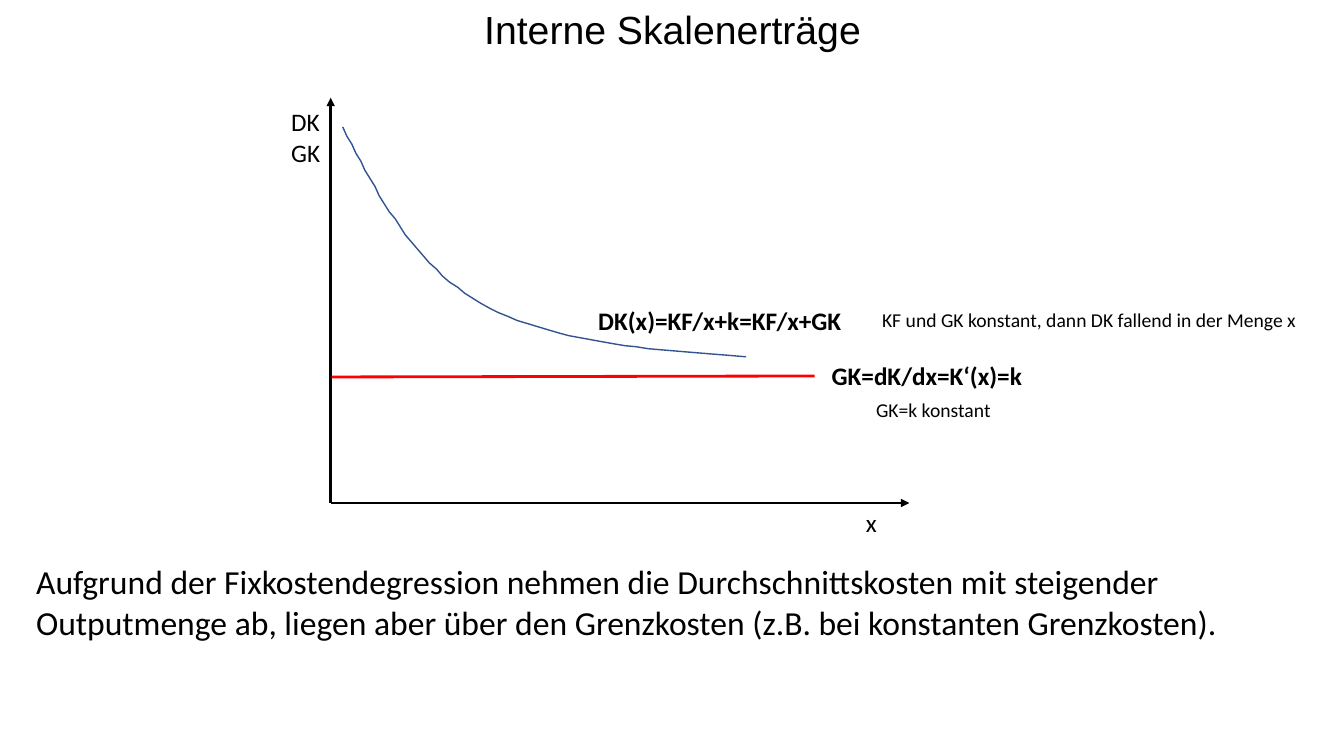
from dataclasses import dataclass

from lxml.etree import SubElement
from pptx import Presentation
from pptx.dml.color import RGBColor
from pptx.enum.shapes import MSO_CONNECTOR
from pptx.enum.text import MSO_ANCHOR, PP_ALIGN
from pptx.oxml.ns import qn
from pptx.util import Emu, Pt

SCALE = 9144  # EMU per px, 100 px to the inch
STEPS = 24    # straight pieces per curve segment


@dataclass(frozen=True)
class Theme:
    ink: str = "000000"
    red: str = "FF0000"
    blue: str = "325491"
    head: str = "Arial"
    body: str = "Calibri"
    title: int = 28
    lead: int = 24
    label: int = 18
    note: int = 14
    thick: int = 2
    thin: int = 1


def px(num):
    return Emu(round(num * SCALE))


def bezier(a, b, c, d):
    """Points on a cubic curve, without its start."""
    for i in range(1, STEPS + 1):
        t = i / STEPS
        u = 1 - t
        yield tuple(u**3 * p + 3 * u * u * t * q + 3 * u * t * t * r + t**3 * s
                    for p, q, r, s in zip(a, b, c, d))


class Canvas:
    def __init__(self, slide, theme):
        self.slide = slide
        self.theme = theme

    def text(self, box, lines, size, font=None, bold=False,
             align=PP_ALIGN.LEFT, wrap=True, mid=False, space=1.0):
        shape = self.slide.shapes.add_textbox(*map(px, box))
        frame = shape.text_frame
        frame.word_wrap = wrap
        frame.vertical_anchor = MSO_ANCHOR.MIDDLE if mid else MSO_ANCHOR.TOP
        for i, line in enumerate(lines):
            para = frame.add_paragraph() if i else frame.paragraphs[0]
            para.alignment = align
            para.line_spacing = space
            run = para.add_run()
            run.text = line
            run.font.name = font or self.theme.body
            run.font.size = Pt(size)
            run.font.bold = bold
            run.font.color.rgb = RGBColor.from_string(self.theme.ink)

    def stroke(self, line, color, width):
        line.color.rgb = RGBColor.from_string(color)
        line.width = Pt(width)

    def line(self, start, end, color, arrow=False):
        link = self.slide.shapes.add_connector(
            MSO_CONNECTOR.STRAIGHT, *map(px, start + end))
        self.stroke(link.line, color, self.theme.thick)
        if arrow:
            SubElement(link.line._get_or_add_ln(), qn("a:tailEnd"), type="triangle")
        SubElement(link._element.spPr, qn("a:effectLst"))

    def curve(self, start, parts, color):
        pts, last = [], start
        for part in parts:
            pts += bezier(last, *part)
            last = part[-1]
        form = self.slide.shapes.build_freeform(*start, scale=SCALE)
        form.add_line_segments(pts, close=False)
        shape = form.convert_to_shape()
        shape.shadow.inherit = False
        shape.fill.background()
        self.stroke(shape.line, color, self.theme.thin)


def main():
    deck = Presentation()
    deck.slide_width, deck.slide_height = px(1333), px(750)
    theme = Theme()
    art = Canvas(deck.slides.add_slide(deck.slide_layouts[6]), theme)

    # Title and conclusion
    art.text((167, -3, 1000, 70), ["Interne Skalenerträge"], theme.title,
             font=theme.head, align=PP_ALIGN.CENTER, mid=True, space=0.9)
    art.text((26, 552, 1307, 94),
             ["Aufgrund der Fixkostendegression nehmen die Durchschnittskosten "
              "mit steigender Outputmenge ab, liegen aber über den Grenzkosten "
              "(z.B. bei konstanten Grenzkosten)."], theme.lead)

    # Axes
    origin = (328, 499)
    for tip in ((328, 97), (902, 499)):
        art.line(origin, tip, theme.ink, arrow=True)
    art.text((849, 498, 31, 40), ["x"], theme.label, wrap=False)
    art.text((279, 101, 49, 71), ["DK", "GK"], theme.label, wrap=False)

    # Marginal and average cost
    art.line((329, 374), (808, 373), theme.red)
    art.curve((340, 126),
              [((375, 195), (411, 263), (477, 301)),
               ((544, 339), (642, 347), (740, 354))], theme.blue)

    # Formulas
    art.text((582, 298, 264, 40), ["DK(x)=KF/x+k=KF/x+GK"], theme.label,
             bold=True, align=PP_ALIGN.CENTER, wrap=False)
    art.text((815, 353, 309, 40), ["GK=dK/dx=K‘(x)=k"], theme.label, bold=True)

    # Notes
    art.text((865, 301, 432, 33),
             ["KF und GK konstant, dann DK fallend in der Menge x"], theme.note)
    art.text((859, 390, 149, 33), ["GK=k konstant"], theme.note)

    deck.save("out.pptx")


if __name__ == "__main__":
    main()
